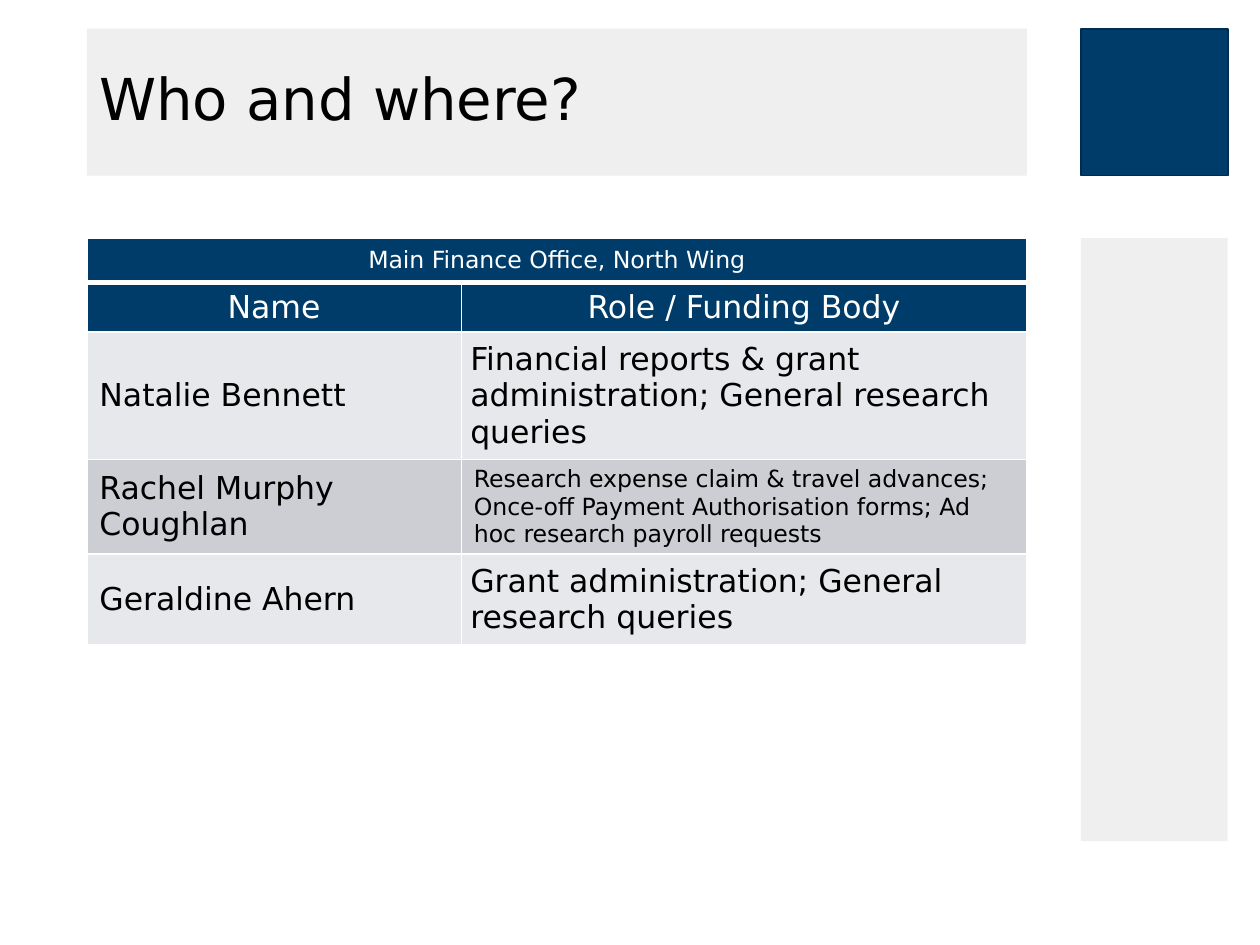
from dataclasses import dataclass

from lxml.etree import SubElement
from pptx import Presentation
from pptx.dml.color import RGBColor
from pptx.enum.shapes import MSO_SHAPE
from pptx.enum.text import MSO_ANCHOR, PP_ALIGN
from pptx.oxml.ns import qn
from pptx.util import Cm, Pt


@dataclass(frozen=True)
class Theme:
    font: str = "DejaVu Sans"
    navy: str = "003C69"
    navy_edge: str = "002C4E"
    pale: str = "EFEFF0"
    bands: tuple = ("E7E8EB", "CCCED4")
    white: str = "FFFFFF"
    black: str = "000000"
    title: float = 33
    body: float = 18
    small: float = 13.5


THEME = Theme()
OFFICE = "Main Finance Office, North Wing"
HEADINGS = ("Name", "Role / Funding Body")
STAFF = [
    ("Natalie Bennett",
     "Financial reports & grant administration; General research queries"),
    ("Rachel Murphy Coughlan",
     "Research expense claim & travel advances; Once-off Payment "
     "Authorisation forms; Ad hoc research payroll requests"),
    ("Geraldine Ahern", "Grant administration; General research queries"),
]
COMPACT_ROW = 1  # the staff row whose role is set in small type


def add_text(tf, text, size, color, align=PP_ALIGN.LEFT):
    p = tf.paragraphs[0]
    p.alignment = align
    r = p.add_run()
    r.text = text
    r.font.name = THEME.font
    r.font.size = Pt(size)
    r.font.color.rgb = RGBColor.from_string(color)
    return p


def add_block(slide, left, top, width, height, fill, edge=None):
    sp = slide.shapes.add_shape(
        MSO_SHAPE.RECTANGLE, Cm(left), Cm(top), Cm(width), Cm(height))
    sp.shadow.inherit = False
    sp.fill.solid()
    sp.fill.fore_color.rgb = RGBColor.from_string(fill)
    if edge:
        sp.line.color.rgb = RGBColor.from_string(edge)
        sp.line.width = Pt(1)
    else:
        sp.line.fill.background()
    return sp


def add_title(slide, left, top, width, height, text):
    tf = add_block(slide, left, top, width, height, THEME.pale).text_frame
    tf.word_wrap = True
    tf.vertical_anchor = MSO_ANCHOR.MIDDLE
    add_text(tf, text, THEME.title, THEME.black).line_spacing = 0.9


def add_side_panel(slide, left, top, width, height, bar_offset):
    """Navy square at the top of the box, pale bar from bar_offset down."""
    add_block(slide, left, top, width, width, THEME.navy, THEME.navy_edge)
    add_block(slide, left, top + bar_offset, width, height - bar_offset,
              THEME.pale)


def set_borders(cell, top=1, bottom=1):
    """White borders; they must come before the fill in the cell properties."""
    tc_pr = cell._tc.get_or_add_tcPr()
    widths = {"a:lnL": 1, "a:lnR": 1, "a:lnT": top, "a:lnB": bottom}
    for i, (tag, width) in enumerate(widths.items()):
        ln = SubElement(tc_pr, qn(tag), w=str(Pt(width)))
        fill = SubElement(ln, qn("a:solidFill"))
        SubElement(fill, qn("a:srgbClr"), val=THEME.white)
        tc_pr.insert(i, ln)


def fill_cell(cell, text, fill, size, color, align=PP_ALIGN.LEFT):
    cell.fill.solid()
    cell.fill.fore_color.rgb = RGBColor.from_string(fill)
    cell.vertical_anchor = MSO_ANCHOR.MIDDLE
    add_text(cell.text_frame, text, size, color, align)


def add_staff_table(slide, left, top, width, name_width):
    heights = [0.89, 0.89] + [1.4] * len(STAFF)
    table = slide.shapes.add_table(
        len(heights), 2, Cm(left), Cm(top), Cm(width), Cm(sum(heights))).table
    table.first_row = table.horz_banding = False
    table.columns[0].width = Cm(name_width)
    table.columns[1].width = Cm(width - name_width)
    for i, height in enumerate(heights):
        table.rows[i].height = Cm(height)
        for cell in table.rows[i].cells:
            set_borders(cell, top=3 if i == 1 else 1, bottom=3 if i == 0 else 1)

    table.cell(0, 0).merge(table.cell(0, 1))
    fill_cell(table.cell(0, 0), OFFICE, THEME.navy, THEME.small, THEME.white,
              PP_ALIGN.CENTER)
    for col, heading in enumerate(HEADINGS):
        fill_cell(table.cell(1, col), heading, THEME.navy, THEME.body,
                  THEME.white, PP_ALIGN.CENTER)

    for i, (name, role) in enumerate(STAFF):
        band = THEME.bands[i % 2]
        name_cell, role_cell = table.rows[i + 2].cells
        fill_cell(name_cell, name, band, THEME.body, THEME.black)
        compact = i == COMPACT_ROW
        fill_cell(role_cell, role, band,
                  THEME.small if compact else THEME.body, THEME.black)
        if not compact:
            role_cell.margin_left = role_cell.margin_right = Cm(0.18)
            role_cell.margin_top = role_cell.margin_bottom = Cm(0.18)


def main():
    prs = Presentation()
    prs.slide_width, prs.slide_height = Cm(25.4), Cm(19.05)
    slide = prs.slides.add_slide(prs.slide_layouts[6])
    left, top, width = 1.75, 0.58, 18.95
    add_side_panel(slide, 21.79, top, 2.96, 16.38, bar_offset=4.22)
    add_title(slide, left, top, width, 2.96, "Who and where?")
    add_staff_table(slide, left, 4.81, width, name_width=7.55)
    prs.save("out.pptx")


if __name__ == "__main__":
    main()
